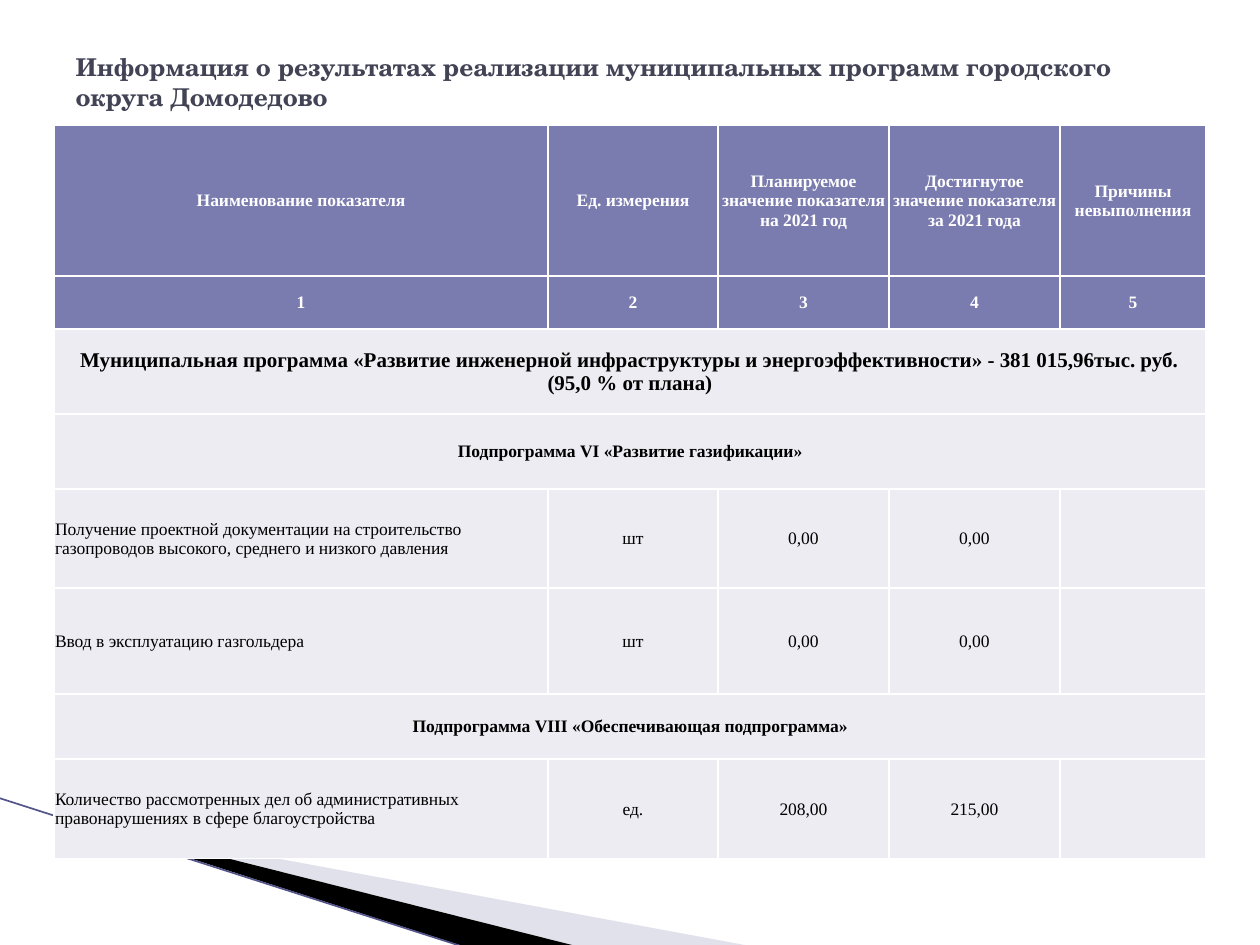
import lxml.etree
import pptx
import pptx.dml.color
import pptx.enum.shapes
import pptx.enum.text
import pptx.oxml.ns
import pptx.util

PX = 914400 / 126
qn = pptx.oxml.ns.qn
MIDDLE = pptx.enum.text.MSO_ANCHOR.MIDDLE
LEFT = pptx.enum.text.PP_ALIGN.LEFT
CENTER = pptx.enum.text.PP_ALIGN.CENTER


def px(value):
    return pptx.util.Emu(round(value * PX))


def color(code):
    return pptx.dml.color.RGBColor.from_string(code)


deck = pptx.Presentation()
deck.slide_width = px(1260)
deck.slide_height = px(945)
slide = deck.slides.add_slide(deck.slide_layouts[5])

wedges = [
    ([(69, 820), (750, 946), (575, 946), (69, 819)], "B6B6D1", 40),
    ([(67, 818), (576, 946), (469, 948), (68, 819)], "000000", 100),
]
for points, shade, opacity in wedges:
    outline = slide.shapes.build_freeform(*points[0], scale=PX)
    outline.add_line_segments(points[1:], close=True)
    wedge = outline.convert_to_shape()
    wedge.shadow.inherit = False
    wedge.fill.solid()
    wedge.fill.fore_color.rgb = color(shade)
    wedge.line.fill.background()
    if opacity < 100:
        tint = wedge.fill._xPr.find(".//" + qn("a:srgbClr"))
        lxml.etree.SubElement(tint, qn("a:alpha"), val=str(opacity * 1000))

edge = slide.shapes.add_connector(
    pptx.enum.shapes.MSO_CONNECTOR.STRAIGHT, px(-1), px(798), px(467), px(948))
edge.line.color.rgb = color("53548A")
edge.line.width = pptx.util.Pt(0.95)
lxml.etree.SubElement(edge._element.spPr, qn("a:effectLst"))

title = slide.shapes.title
title.left, title.top, title.width, title.height = px(63), px(38), px(1134), px(87)
heading = title.text_frame
heading.word_wrap = True
heading.auto_size = pptx.enum.text.MSO_AUTO_SIZE.NONE
heading.vertical_anchor = MIDDLE
heading.paragraphs[0].alignment = LEFT
run = heading.paragraphs[0].add_run()
run.text = "Информация о результатах реализации муниципальных программ городского округа Домодедово"
run.font.name = "TeX Gyre Schola"
run.font.size = pptx.util.Pt(14)
run.font.bold = True
run.font.color.rgb = color("424456")

indicators = [
    ["Наименование показателя", "Ед. измерения", "Планируемое значение показателя на 2021 год",
     "Достигнутое значение показателя за 2021 года", "Причины невыполнения"],
    ["1", "2", "3", "4", "5"],
    ["Муниципальная программа «Развитие инженерной инфраструктуры и энергоэффективности»"
     " - 381 015,96тыс. руб.\n(95,0 % от плана)"],
    ["Подпрограмма VI «Развитие газификации»"],
    ["Получение проектной документации на строительство газопроводов высокого, среднего"
     " и низкого давления", "шт", "0,00", "0,00", ""],
    ["Ввод в эксплуатацию газгольдера", "шт", "0,00", "0,00", ""],
    ["Подпрограмма VIII «Обеспечивающая подпрограмма»"],
    ["Количество рассмотренных дел об административных правонарушениях в сфере благоустройства",
     "ед.", "208,00", "215,00", ""],
]
column_widths = [494, 170, 171, 171, 146]
row_heights = [151, 53, 85, 75, 99, 106, 65, 100]
program_row = 2

table = slide.shapes.add_table(
    len(row_heights), len(column_widths), px(54), px(125),
    px(sum(column_widths)), px(sum(row_heights))).table
for column, width in zip(table.columns, column_widths):
    column.width = px(width)
for row, height in zip(table.rows, row_heights):
    row.height = px(height)

for r, values in enumerate(indicators):
    is_header = r < program_row
    is_section = len(values) == 1
    if is_section:
        table.cell(r, 0).merge(table.cell(r, len(column_widths) - 1))
    for c in range(len(column_widths)):
        cell = table.cell(r, c)
        cell.margin_left = cell.margin_top = cell.margin_right = px(1)
        cell.margin_bottom = 0
        cell.vertical_anchor = MIDDLE
        for side in ("a:lnL", "a:lnR", "a:lnT", "a:lnB"):
            border = lxml.etree.SubElement(cell._tc.tcPr, qn(side), w="12700")
            stroke = lxml.etree.SubElement(border, qn("a:solidFill"))
            lxml.etree.SubElement(stroke, qn("a:srgbClr"), val="FFFFFF")
        cell.fill.solid()
        cell.fill.fore_color.rgb = color("7A7BAE" if is_header else "ECECF2")
        if c >= len(values) or not values[c]:
            continue
        paragraph = cell.text_frame.paragraphs[0]
        paragraph.alignment = CENTER if is_header or is_section or c else LEFT
        for i, line in enumerate(values[c].split("\n")):
            if i:
                paragraph.add_line_break()
            run = paragraph.add_run()
            run.text = line
            run.font.name = "Times New Roman"
            run.font.size = pptx.util.Pt(12 if r == program_row else 10)
            run.font.bold = is_header or is_section
            run.font.color.rgb = color("FFFFFF" if is_header else "000000")

deck.save("out.pptx")
